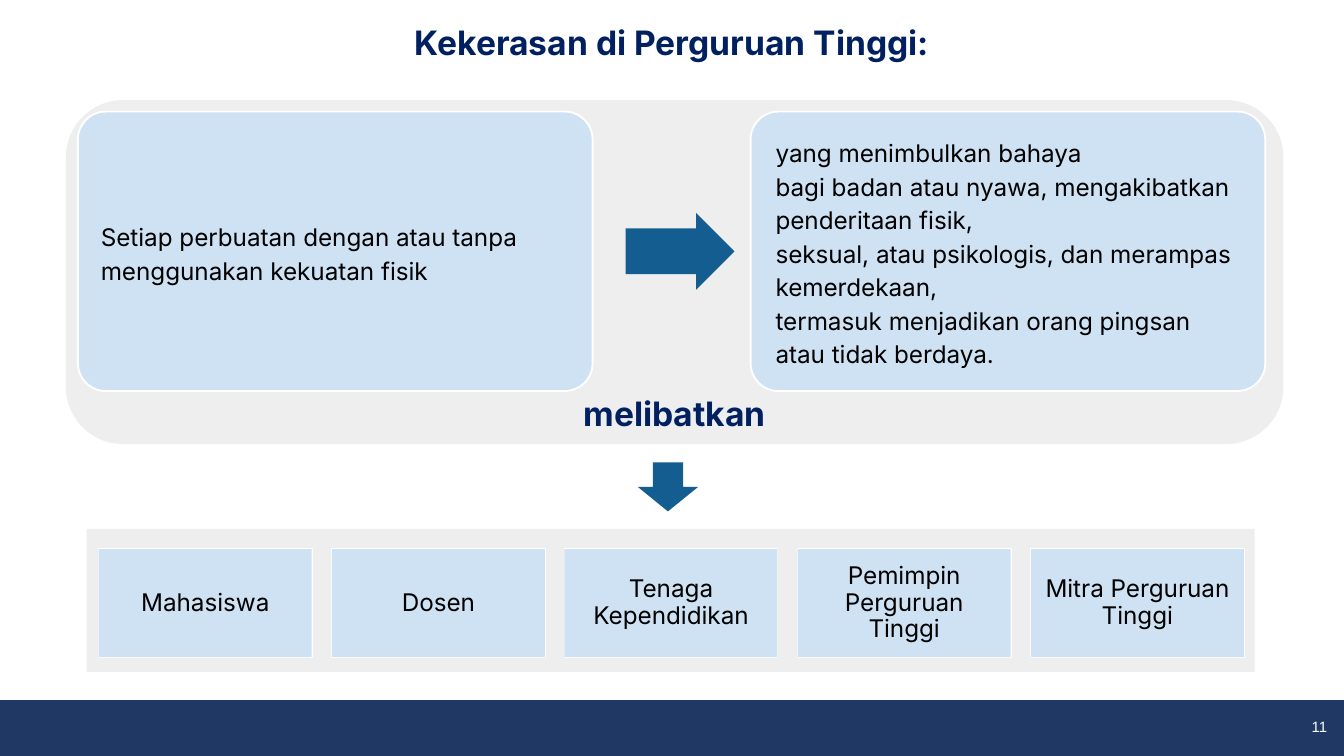
from dataclasses import dataclass

from pptx import Presentation
from pptx.dml.color import RGBColor
from pptx.enum.shapes import MSO_SHAPE
from pptx.enum.text import MSO_ANCHOR, PP_ALIGN
from pptx.util import Emu, Pt

RECTANGLE = MSO_SHAPE.RECTANGLE
ROUNDED = MSO_SHAPE.ROUNDED_RECTANGLE
RIGHT_ARROW = MSO_SHAPE.RIGHT_ARROW
DOWN_ARROW = MSO_SHAPE.DOWN_ARROW
LEFT, CENTER, RIGHT = PP_ALIGN.LEFT, PP_ALIGN.CENTER, PP_ALIGN.RIGHT
MIDDLE = MSO_ANCHOR.MIDDLE

EMU_PER_PX = 4572  # 200 px to the inch
COLORS = {
    "navy": "1F3864",
    "heading": "002060",
    "panel": "EEEEEE",
    "card": "CFE2F3",
    "frame": "4372C3",
    "arrow": "135D91",
    "white": "FFFFFF",
    "black": "000000",
}


@dataclass(frozen=True)
class Area:
    left: int
    top: int
    width: int
    height: int

    def emu(self) -> list[Emu]:
        return [px(n) for n in (self.left, self.top, self.width, self.height)]


@dataclass(frozen=True)
class Card:
    left: int
    margins: tuple[int, int, int, int]
    lines: tuple[str, ...]


def px(length: int) -> Emu:
    return Emu(length * EMU_PER_PX)


def color(name: str) -> RGBColor:
    return RGBColor.from_string(COLORS[name])


def add_block(page, kind, area: Area, fill: str, line: str | None = None,
              adjustments: tuple[float, ...] = ()):
    block = page.shapes.add_shape(kind, *area.emu())
    block.shadow.inherit = False
    block.fill.solid()
    block.fill.fore_color.rgb = color(fill)
    if line:
        block.line.color.rgb = color(line)
        block.line.width = Pt(1)
    else:
        block.line.fill.background()
    for index, value in enumerate(adjustments):
        block.adjustments[index] = value
    return block


def write(box, *lines: str, size: int = 13, font: str = "Inter", ink: str = "black",
          bold: bool = False, align=LEFT, spacing: float = 1.0,
          margins: tuple[int, int, int, int] = (20, 20, 20, 20)) -> None:
    """Fill a box with one paragraph per line; margins run left, top, right, bottom."""
    frame = box.text_frame
    frame.word_wrap = True
    frame.vertical_anchor = MIDDLE
    (frame.margin_left, frame.margin_top,
     frame.margin_right, frame.margin_bottom) = map(px, margins)
    for index, text in enumerate(lines):
        para = frame.add_paragraph() if index else frame.paragraphs[0]
        para.alignment = align
        para.line_spacing = spacing
        span = para.add_run()
        span.text = text
        span.font.size = Pt(size)
        span.font.name = font
        span.font.bold = bold
        span.font.color.rgb = color(ink)


def add_heading(page, text: str, area: Area) -> None:
    write(page.shapes.add_textbox(*area.emu()), text,
          size=18, ink="heading", bold=True, align=CENTER)


def add_card(page, card: Card) -> None:
    box = add_block(page, ROUNDED, Area(card.left, 166, 766, 416), "card", "white", (0.1,))
    write(box, *card.lines, spacing=1.15, margins=card.margins)


def add_party(page, index: int, name: str) -> None:
    """Draw a white-edged frame and the labelled face that covers its inner edge."""
    area = Area(round(147 + index * 346.75), 817, 317, 161)
    add_block(page, RECTANGLE, area, "frame", "white")
    face = add_block(page, RECTANGLE, area, "card")
    write(face, name, align=CENTER, spacing=0.9)


CARDS = (
    Card(116, (22, 11, 22, 10),
         ("Setiap perbuatan dengan atau tanpa menggunakan kekuatan fisik",)),
    Card(1117, (25, 10, 18, 10),
         ("yang menimbulkan bahaya",
          "bagi badan atau nyawa, mengakibatkan penderitaan fisik,",
          "seksual, atau psikologis, dan merampas kemerdekaan,",
          "termasuk menjadikan orang pingsan atau tidak berdaya.")),
)
PARTIES = ("Mahasiswa", "Dosen", "Tenaga Kependidikan",
           "Pemimpin Perguruan Tinggi", "Mitra Perguruan Tinggi")


def main() -> None:
    deck = Presentation()
    deck.slide_width, deck.slide_height = px(2000), px(1125)
    page = deck.slides.add_slide(deck.slide_layouts[6])

    # Footer band and page number
    add_block(page, RECTANGLE, Area(0, 1043, 2000, 82), "navy", "navy")
    number = page.shapes.add_textbox(*Area(1859, 1062, 130, 40).emu())
    write(number, "11", size=8, font="Arial", ink="white", align=RIGHT,
          margins=(14, 8, 14, 8))

    # Title
    add_heading(page, "Kekerasan di Perguruan Tinggi:", Area(0, 12, 2000, 100))

    # Definition panel: act leads to harm
    add_block(page, ROUNDED, Area(98, 149, 1812, 512), "panel", adjustments=(0.167,))
    for card in CARDS:
        add_card(page, card)
    add_block(page, RIGHT_ARROW, Area(931, 317, 162, 114), "arrow", adjustments=(0.6, 0.5))
    add_heading(page, "melibatkan", Area(98, 565, 1812, 100))

    # Parties involved
    add_block(page, DOWN_ARROW, Area(949, 688, 90, 73), "arrow", adjustments=(0.5, 0.5))
    add_block(page, RECTANGLE, Area(129, 787, 1738, 213), "panel")
    for index, name in enumerate(PARTIES):
        add_party(page, index, name)

    deck.save("out.pptx")


if __name__ == "__main__":
    main()
